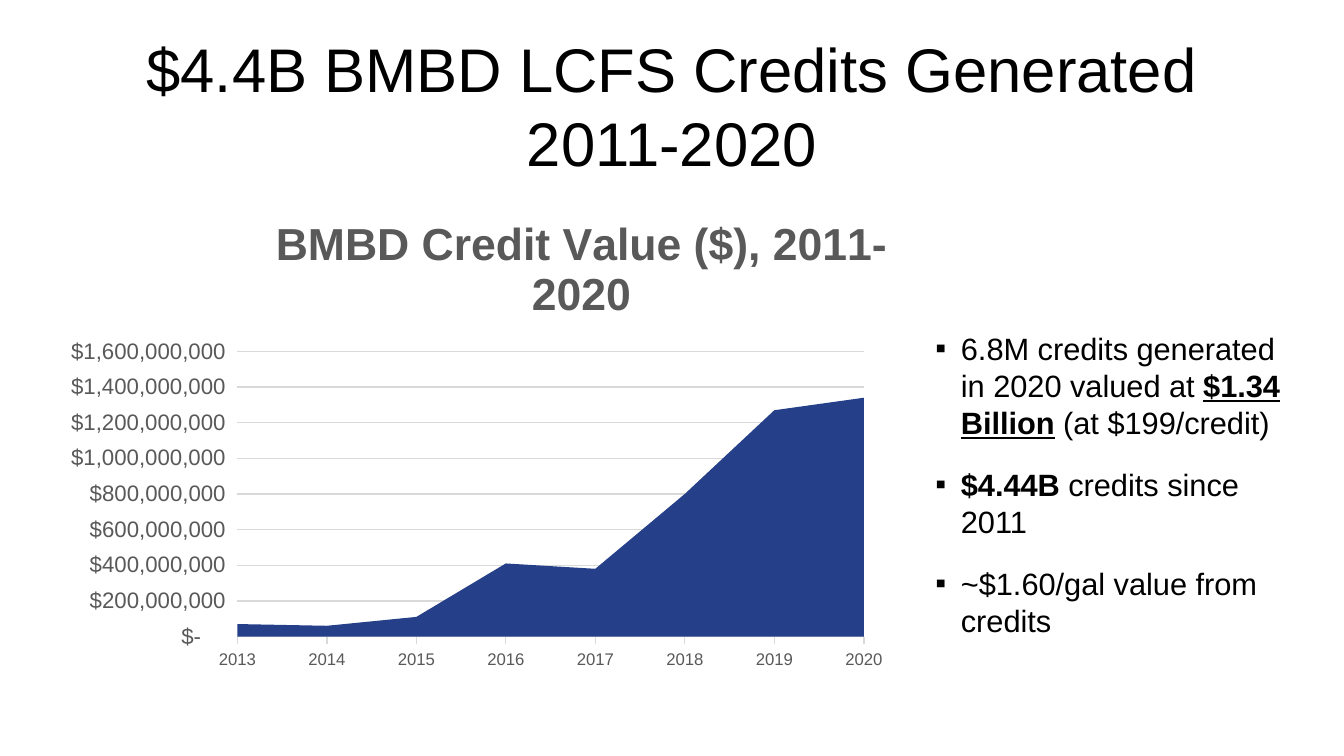
from lxml import etree
from pptx import Presentation
from pptx.chart.data import CategoryChartData
from pptx.dml.color import RGBColor
from pptx.enum.chart import XL_CHART_TYPE, XL_TICK_MARK
from pptx.enum.text import MSO_ANCHOR, MSO_AUTO_SIZE, PP_ALIGN
from pptx.oxml.ns import qn
from pptx.util import Inches, Pt

AREA = XL_CHART_TYPE.AREA
TICK_NONE, TICK_OUT = XL_TICK_MARK.NONE, XL_TICK_MARK.OUTSIDE
MIDDLE, CENTER = MSO_ANCHOR.MIDDLE, PP_ALIGN.CENTER
NO_FIT, GROW = MSO_AUTO_SIZE.NONE, MSO_AUTO_SIZE.SHAPE_TO_FIT_TEXT

BLACK = RGBColor(0x00, 0x00, 0x00)
GRAY = RGBColor(0x59, 0x59, 0x59)
LIGHT_GRAY = RGBColor(0xD9, 0xD9, 0xD9)
NAVY = RGBColor(0x25, 0x40, 0x89)
FONT = "Arial"

deck = Presentation()
deck.slide_width = Inches(10)
deck.slide_height = deck.slide_width * 9 // 16
page = deck.slides.add_slide(deck.slide_layouts[1])


def area(left, top, width, height):
    """Turn percentages of the slide into a position and a size."""
    across, down = deck.slide_width / 100, deck.slide_height / 100
    return [int(left * across), int(top * down), int(width * across), int(height * down)]


def set_layout(parent, index, modes, **percentages):
    """Place a chart part by hand, in percentages of the chart."""
    layout = parent.find(qn("c:layout"))
    if layout is None:
        layout = etree.Element(qn("c:layout"))
        parent.insert(index, layout)
    manual = etree.SubElement(layout, qn("c:manualLayout"))
    for name, value in modes.items():
        etree.SubElement(manual, qn(f"c:{name}")).set("val", value)
    for name, value in percentages.items():
        etree.SubElement(manual, qn(f"c:{name}")).set("val", f"{value / 100:.3f}")


# Title
title = page.shapes.title
title.left, title.top, title.width, title.height = area(5, 5.5, 90, 16.7)
title.text_frame.text = "$4.4B BMBD LCFS Credits Generated 2011-2020"
title.text_frame.auto_size = NO_FIT
title.text_frame.vertical_anchor = MIDDLE
heading = title.text_frame.paragraphs[0]
heading.alignment = CENTER
heading.font.name, heading.font.size = FONT, Pt(33)
heading.font.color.rgb = BLACK

# Bullets: each span is text, bold, underline
bullets = [
    [("6.8M credits generated in 2020 valued at ", False, False),
     ("$1.34 Billion", True, True),
     (" ", True, False),
     ("(at $199/credit)", False, False)],
    [("$4.44B ", True, False), ("credits since 2011", False, False)],
    [("~$1.60/gal value from credits", False, False)],
]
body = page.placeholders[1]
body.left, body.top, body.width, body.height = area(68.6, 42.75, 28, 38.4)
frame = body.text_frame
frame.auto_size = GROW
for number, spans in enumerate(bullets):
    paragraph = frame.add_paragraph() if number else frame.paragraphs[0]
    properties = paragraph._p.get_or_add_pPr()
    properties.set("marL", str(Inches(0.19)))
    properties.set("indent", str(-Inches(0.19)))
    etree.SubElement(properties, qn("a:buFont")).set("typeface", FONT)
    etree.SubElement(properties, qn("a:buChar")).set("char", "▪")
    paragraph.space_before, paragraph.space_after = Pt(0), Pt(13.5)
    for text, bold, underline in spans:
        span = paragraph.add_run()
        span.text = text
        span.font.name, span.font.size = FONT, Pt(16.5)
        span.font.bold, span.font.underline = bold, underline
        span.font.color.rgb = BLACK

# Credit value chart
credit_data = CategoryChartData()
credit_data.categories = [str(year) for year in range(2013, 2021)]
millions = [70, 60, 110, 410, 380, 800, 1270, 1340]
credit_data.add_series("Series 1", [value * 10**6 for value in millions])
chart = page.shapes.add_chart(AREA, *area(3.4, 26.3, 63.2, 63.5), credit_data).chart
chart.font.name, chart.font.size = FONT, Pt(10)
chart.font.color.rgb = BLACK
chart.has_legend = False
plot = chart.plots[0]
plot.vary_by_categories = False
plot.series[0].format.fill.solid()
plot.series[0].format.fill.fore_color.rgb = NAVY

chart.has_title = True
chart_title = chart.chart_title
chart_title.text_frame.text = "BMBD Credit Value ($), 2011-2020"
title_font = chart_title.text_frame.paragraphs[0].runs[0].font
title_font.name, title_font.size, title_font.bold = FONT, Pt(24), True
title_font.color.rgb = GRAY
edges = {"xMode": "edge", "yMode": "edge"}
set_layout(chart_title._element, 1, edges, x=26.3, y=1.6)
plot_area = chart._chartSpace.chart.plotArea
set_layout(plot_area, 0, {"layoutTarget": "inner", **edges},
           x=22.7, y=31.8, w=74.2, h=59.4)

years, dollars = chart.category_axis, chart.value_axis
for axis, size, tick in ((years, 9, TICK_OUT), (dollars, 12, TICK_NONE)):
    axis.major_tick_mark, axis.minor_tick_mark = tick, TICK_NONE
    labels = axis.tick_labels.font
    labels.name, labels.size, labels.bold = FONT, Pt(size), False
    labels.color.rgb = GRAY
dollars.has_major_gridlines = True
for line in (years.format.line, dollars.major_gridlines.format.line):
    line.color.rgb = LIGHT_GRAY
    line.width = Pt(0.75)
dollars.format.line.fill.background()
dollars.minimum_scale, dollars.maximum_scale = 0, 16 * 10**8
dollars.major_unit = 2 * 10**8
dollars.tick_labels.number_format = (
    r'_("$"* #,##0_);_("$"* \(#,##0\);_("$"* "-"??_);_(@_)')
dollars.tick_labels.number_format_is_linked = False
crossing = dollars._element.find(qn("c:crossBetween"))
if crossing is not None:
    crossing.set("val", "midCat")

deck.save("out.pptx")
